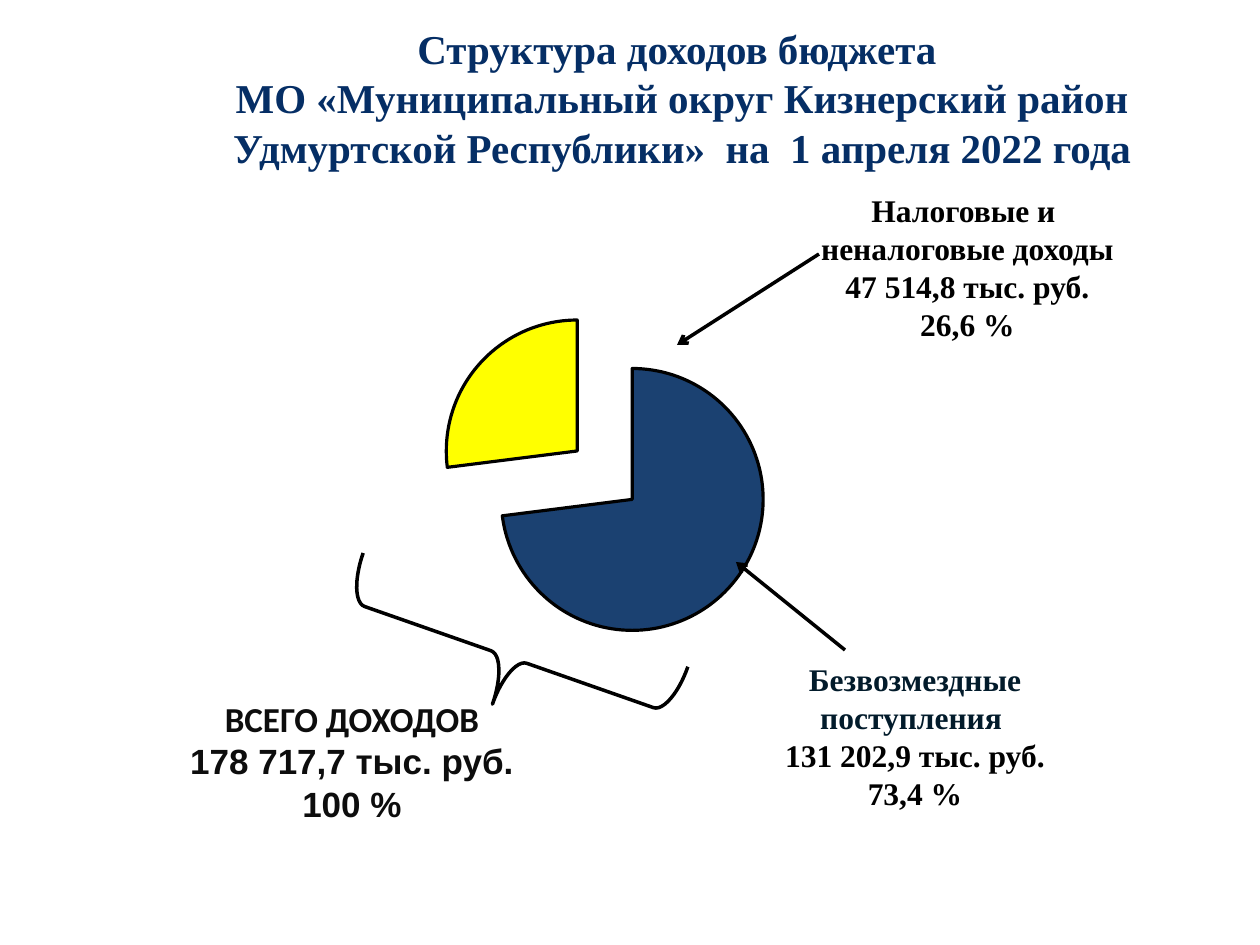
from lxml import etree
from pptx import Presentation
from pptx.chart.data import CategoryChartData
from pptx.dml.color import RGBColor
from pptx.enum.chart import XL_CHART_TYPE
from pptx.enum.shapes import MSO_CONNECTOR, MSO_SHAPE
from pptx.enum.text import MSO_ANCHOR, PP_ALIGN
from pptx.oxml import parse_xml
from pptx.oxml.ns import nsdecls, qn
from pptx.util import Pt

PIE = XL_CHART_TYPE.PIE
STRAIGHT = MSO_CONNECTOR.STRAIGHT
RECTANGLE, LEFT_BRACE = MSO_SHAPE.RECTANGLE, MSO_SHAPE.LEFT_BRACE
TOP, MIDDLE = MSO_ANCHOR.TOP, MSO_ANCHOR.MIDDLE
CENTER = PP_ALIGN.CENTER

BLACK = RGBColor(0x00, 0x00, 0x00)
WHITE = RGBColor(0xFF, 0xFF, 0xFF)
TITLE_BLUE = RGBColor(0x05, 0x2E, 0x65)
DARK_TEAL = RGBColor(0x02, 0x1B, 0x2B)
NEAR_BLACK = RGBColor(0x0D, 0x0D, 0x0D)
NAVY = RGBColor(0x1B, 0x41, 0x71)
YELLOW = RGBColor(0xFF, 0xFF, 0x00)

SERIF = "Times New Roman"
EMU_PER_PX = 914400 / 126


def px(*lengths):
    return [round(length * EMU_PER_PX) for length in lengths]


def write(shape, lines, size, anchor=TOP):
    """Fill a shape with centred bold lines of (text, font, colour)."""
    frame = shape.text_frame
    frame.word_wrap = True
    frame.vertical_anchor = anchor
    for i, (text, font, color) in enumerate(lines):
        paragraph = frame.add_paragraph() if i else frame.paragraphs[0]
        paragraph.text = text
        paragraph.alignment = CENTER
        paragraph.font.name = font
        paragraph.font.size = Pt(size)
        paragraph.font.bold = True
        paragraph.font.color.rgb = color


prs = Presentation()
prs.slide_width, prs.slide_height = px(1260, 945)
slide = prs.slides.add_slide(prs.slide_layouts[6])
shapes = slide.shapes

# Title
title = shapes.add_textbox(*px(124, 29, 1116, 137))
write(title, [("Структура доходов бюджета \vМО «Муниципальный округ Кизнерский район "
               "Удмуртской Республики»  на  1 апреля 2022 года", SERIF, TITLE_BLUE)],
      23.4, MIDDLE)

# Income pie
income = CategoryChartData()
income.categories = ["1", "2"]
income.add_series("Series 1", (73, 27))
chart = shapes.add_chart(PIE, *px(175, 249, 752, 444), income).chart
chart.has_legend = False
chart.has_title = False
chart.font.name = "Roboto"
chart.font.size = Pt(11.1)
chart.font.bold = True
chart.font.color.rgb = BLACK
plot = chart.plots[0]
plot.vary_by_categories = False
shares = plot.series[0]
for i, color in enumerate((NAVY, YELLOW)):
    share = shares.points[i].format
    share.fill.solid()
    share.fill.fore_color.rgb = color
    share.line.color.rgb = BLACK
    share.line.width = Pt(1.8)

# The larger share is pulled out of the pie
grants_point = chart.element.find(".//" + qn("c:dPt"))
grants_point.find(qn("c:spPr")).addprevious(
    parse_xml(f'<c:explosion {nsdecls("c")} val="56"/>'))

# Plot area fixed to the circle itself, leaving room for the pulled share
plot_area = chart.element.find(".//" + qn("c:plotArea"))
for auto_layout in plot_area.findall(qn("c:layout")):
    plot_area.remove(auto_layout)
plot_area.insert(0, parse_xml(
    f'<c:layout {nsdecls("c")}><c:manualLayout><c:layoutTarget val="inner"/>'
    '<c:xMode val="edge"/><c:yMode val="edge"/><c:x val="0.36"/><c:y val="0.16"/>'
    '<c:w val="0.35"/><c:h val="0.59"/></c:manualLayout></c:layout>'))

# Tax and non-tax income
taxes = shapes.add_shape(RECTANGLE, *px(759, 185, 417, 165))
taxes.shadow.inherit = False
taxes.fill.solid()
taxes.fill.fore_color.rgb = WHITE
taxes.line.fill.background()
write(taxes, [(text, SERIF, BLACK) for text in (
    "Налоговые и ", "неналоговые доходы", "47 514,8 тыс. руб.", "26,6 %")], 18)

# Grants
grants = shapes.add_textbox(*px(724, 654, 382, 165))
write(grants, [("Безвозмездные", SERIF, DARK_TEAL), ("поступления ", SERIF, DARK_TEAL),
               ("131 202,9 тыс. руб.", SERIF, BLACK), ("73,4 %", SERIF, BLACK)], 18)

# Brace and total
brace = shapes.add_shape(LEFT_BRACE, *px(459, 485, 100, 344))
brace.shadow.inherit = False
brace.rotation = 289.3
brace.adjustments[0] = 0.19
brace.adjustments[1] = 0.5
brace.fill.background()
brace.line.color.rgb = BLACK
brace.line.width = Pt(2)

total = shapes.add_textbox(*px(172, 706, 360, 110))
write(total, [("ВСЕГО ДОХОДОВ", "Calibri", NEAR_BLACK),
              ("178 717,7 тыс. руб.", "Arial", NEAR_BLACK),
              ("100 %", "Arial", NEAR_BLACK)], 20, MIDDLE)

# Arrows from the labels to the pie
for ends in ((819, 254, 677, 345), (845, 650, 736, 562)):
    arrow = shapes.add_connector(STRAIGHT, *px(*ends))
    arrow.line.color.rgb = BLACK
    arrow.line.width = Pt(2)
    etree.SubElement(arrow.line._get_or_add_ln(), qn("a:tailEnd"), type="arrow")
    etree.SubElement(arrow._element.spPr, qn("a:effectLst"))

prs.save("out.pptx")
